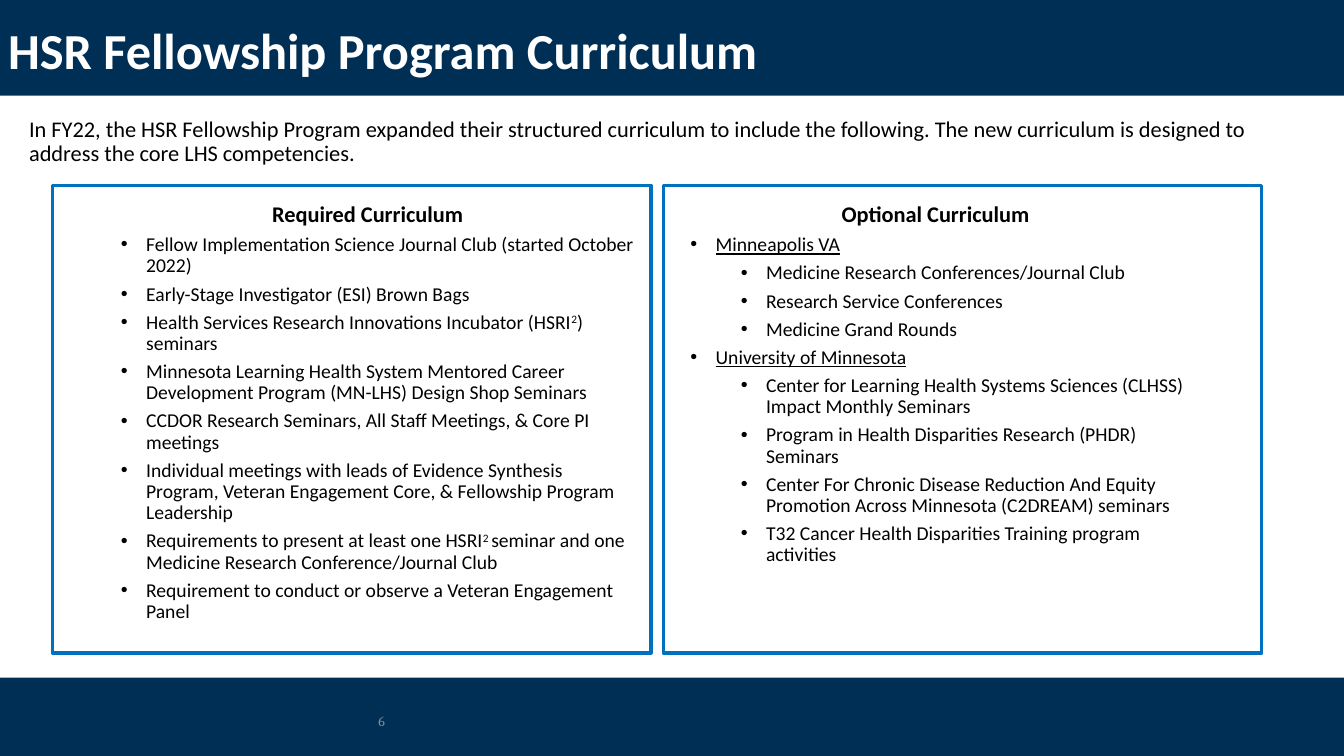
from lxml.etree import SubElement
from pptx import Presentation
from pptx.dml.color import RGBColor
from pptx.enum.shapes import MSO_SHAPE
from pptx.enum.text import MSO_ANCHOR, PP_ALIGN
from pptx.oxml.ns import qn
from pptx.util import Pt

WIDTH, HEIGHT = 960, 540
NAVY, BLUE, WHITE, BLACK, GREY = "002F56", "0070C0", "FFFFFF", "000000", "898989"

INTRO = ("In FY22, the HSR Fellowship Program expanded their structured curriculum "
         "to include the following. The new curriculum is designed to address the "
         "core LHS competencies.")

# Text between carets is superscript.
REQUIRED = [
    "Fellow Implementation Science Journal Club (started October 2022)",
    "Early-Stage Investigator (ESI) Brown Bags",
    "Health Services Research Innovations Incubator (HSRI^2^) seminars",
    "Minnesota Learning Health System Mentored Career Development Program "
    "(MN-LHS) Design Shop Seminars",
    "CCDOR Research Seminars, All Staff Meetings, & Core PI meetings",
    "Individual meetings with leads of Evidence Synthesis Program, Veteran "
    "Engagement Core, & Fellowship Program Leadership",
    "Requirements to present at least one HSRI^2 ^seminar and one Medicine "
    "Research Conference/Journal Club",
    "Requirement to conduct or observe a Veteran Engagement Panel",
]
OPTIONAL = {
    "Minneapolis VA": [
        "Medicine Research Conferences/Journal Club",
        "Research Service Conferences",
        "Medicine Grand Rounds",
    ],
    "University of Minnesota": [
        "Center for Learning Health Systems Sciences (CLHSS) Impact Monthly Seminars",
        "Program in Health Disparities Research (PHDR) Seminars",
        "Center For Chronic Disease Reduction And Equity Promotion Across "
        "Minnesota (C2DREAM) seminars",
        "T32 Cancer Health Disparities Training program activities",
    ],
}


def rgb(value):
    return RGBColor.from_string(value)


def add_rect(slide, box, fill, line=None):
    sp = slide.shapes.add_shape(MSO_SHAPE.RECTANGLE, *map(Pt, box))
    sp.shadow.inherit = False
    sp.fill.solid()
    sp.fill.fore_color.rgb = rgb(fill)
    if line:
        sp.line.color.rgb = rgb(line)
        sp.line.width = Pt(2.25)
    else:
        sp.line.fill.background()


def add_text_frame(slide, box):
    tf = slide.shapes.add_textbox(*map(Pt, box)).text_frame
    tf.word_wrap = True
    return tf


def add_run(p, text, size, color=BLACK, bold=False, font="Calibri"):
    r = p.add_run()
    r.text = text
    r.font.name, r.font.size, r.font.bold = font, Pt(size), bold
    r.font.color.rgb = rgb(color)
    return r


def set_indent(p, left, first=0):
    pPr = p._p.get_or_add_pPr()
    pPr.set("marL", str(Pt(left)))
    pPr.set("indent", str(Pt(first)))
    return pPr


def add_bullet(tf, text, level, underline=False):
    p = tf.add_paragraph()
    p.level = level
    p.line_spacing, p.space_before = 0.9, Pt(5)
    pPr = set_indent(p, 18 + 36 * level, -18)
    SubElement(pPr, qn("a:buFont")).set("typeface", "Arial")
    SubElement(pPr, qn("a:buChar")).set("char", "•")
    for i, part in enumerate(text.split("^")):
        r = add_run(p, part, 14)
        r.font.underline = underline
        if i % 2:
            r.font._element.set("baseline", "30000")


def add_panel(slide, box, heading, shift):
    """Draw a bordered panel; its text starts shift points from the panel's left."""
    x, y, w, h = box
    add_rect(slide, box, WHITE, BLUE)
    tf = add_text_frame(slide, (x + shift, y + 9.4, 407, h - 18))
    tf.margin_left = tf.margin_right = 0
    p = tf.paragraphs[0]
    p.line_spacing = 0.9
    set_indent(p, 144)
    add_run(p, heading, 16, bold=True)
    return tf


def add_header(slide, box):
    add_rect(slide, box, NAVY)
    title = slide.shapes.title
    title.left, title.top, title.width, title.height = map(Pt, box)
    # The title follows its band in stacking order.
    slide.shapes._spTree.append(title._element)
    tf = title.text_frame
    tf.vertical_anchor = MSO_ANCHOR.MIDDLE
    tf.margin_left, tf.margin_top, tf.margin_bottom = Pt(5.8), Pt(7.2), 0
    p = tf.paragraphs[0]
    p.alignment, p.line_spacing = PP_ALIGN.LEFT, 0.9
    add_run(p, "HSR Fellowship Program Curriculum", 36, WHITE, True)


def add_intro(slide, box):
    p = add_text_frame(slide, box).paragraphs[0]
    p.line_spacing = 0.9
    add_run(p, INTRO, 16)


def add_curriculum(slide, box):
    x, y, w, h = box
    gap = 8.6
    panel_w = (w - gap) / 2
    required = add_panel(slide, (x, y, panel_w, h), "Required Curriculum", 13)
    for item in REQUIRED:
        add_bullet(required, item, 1)
    optional = add_panel(slide, (x + panel_w + gap, y, panel_w, h),
                         "Optional Curriculum", -16.5)
    for site, items in OPTIONAL.items():
        add_bullet(optional, site, 1, underline=True)
        for item in items:
            add_bullet(optional, item, 2)


def add_footer(slide, box):
    x, y, w, h = box
    add_rect(slide, box, NAVY)
    tf = add_text_frame(slide, (x + 66, y + 16.5, 216, 28.8))
    tf.vertical_anchor = MSO_ANCHOR.MIDDLE
    p = tf.paragraphs[0]
    p.alignment = PP_ALIGN.RIGHT
    add_run(p, "6", 10, GREY, font="Cambria")


def main():
    prs = Presentation()
    prs.slide_width, prs.slide_height = Pt(WIDTH), Pt(HEIGHT)
    slide = prs.slides.add_slide(prs.slide_layouts[5])
    add_header(slide, (0, 0, WIDTH, 68.4))
    add_intro(slide, (13.7, 80.6, 888, 42.5))
    add_curriculum(slide, (37.4, 132.5, 864, 334))
    add_footer(slide, (0, 484, WIDTH, HEIGHT - 484))
    prs.save("out.pptx")


if __name__ == "__main__":
    main()
